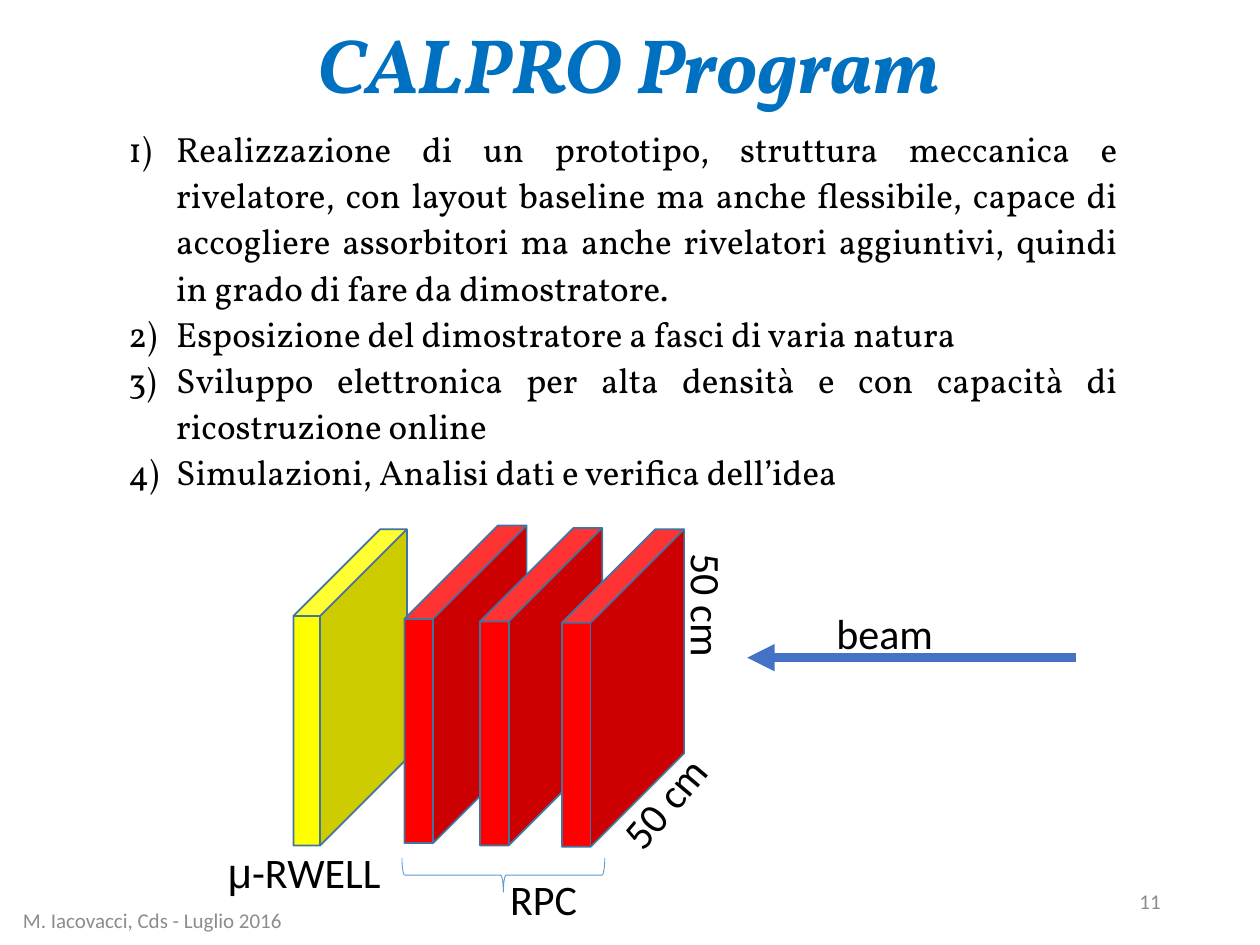
from dataclasses import dataclass

from lxml.etree import SubElement
from pptx import Presentation
from pptx.dml.color import RGBColor
from pptx.enum.shapes import MSO_CONNECTOR, MSO_SHAPE
from pptx.enum.text import MSO_ANCHOR, PP_ALIGN as ALIGN
from pptx.oxml.ns import qn
from pptx.util import Inches, Pt

COLS, ROWS = 100, 75
CELL = Inches(0.1)


@dataclass(frozen=True)
class Theme:
    serif: str = "Vollkorn"
    sans: str = "Calibri"
    symbol: str = "Arial"
    title: str = "0070C0"
    text: str = "000000"
    muted: str = "8C8C8C"
    well: str = "FFFF00"
    rpc: str = "FF0000"
    edge: str = "43739E"
    beam: str = "4472C4"
    brace: str = "5B9BD5"
    title_size: int = 44
    body_size: int = 20
    label_size: int = 24
    footer_size: int = 12


THEME = Theme()

GOALS = [
    "Realizzazione di un prototipo, struttura meccanica e rivelatore, con layout "
    "baseline ma anche flessibile, capace di accogliere assorbitori ma anche "
    "rivelatori aggiuntivi, quindi in grado di fare da dimostratore.",
    "Esposizione del dimostratore a fasci di varia natura",
    "Sviluppo elettronica per alta densità e con capacità di ricostruzione online",
    "Simulazioni, Analisi dati e verifica dell’idea",
]


def grid(*cells):
    """Turn columns and rows of the slide grid into lengths."""
    return [round(c * CELL) for c in cells]


def rgb(value):
    return RGBColor.from_string(value)


def add_run(p, text, size, color=THEME.text, font=THEME.sans):
    r = p.add_run()
    r.text = text
    r.font.size, r.font.name = Pt(size), font
    r.font.color.rgb = rgb(color)
    return r


def set_title(slide, text):
    sp = slide.shapes.title
    sp.left, sp.top, sp.width, sp.height = grid(24.2, -1.8, 86.2, 14.5)
    sp.text_frame.vertical_anchor = MSO_ANCHOR.MIDDLE
    p = sp.text_frame.paragraphs[0]
    p.alignment, p.line_spacing = ALIGN.LEFT, 0.9
    r = add_run(p, text, THEME.title_size, THEME.title, THEME.serif)
    r.font.bold = r.font.italic = True


def add_numbered_list(shapes, box, items):
    tf = shapes.add_textbox(*grid(*box)).text_frame
    tf.word_wrap = True
    for i, item in enumerate(items):
        p = tf.add_paragraph() if i else tf.paragraphs[0]
        pPr = p._p.get_or_add_pPr()
        pPr.set("marL", str(Inches(0.38)))
        pPr.set("indent", str(-Inches(0.38)))
        SubElement(pPr, qn("a:buAutoNum"), type="arabicParenR")
        p.alignment, p.line_spacing = ALIGN.JUSTIFY, 1.1
        add_run(p, item, THEME.body_size, font=THEME.serif)


def add_label(shapes, box, runs, rotation=0, wrap=False):
    """Add a diagram label from (text, font) pairs."""
    sp = shapes.add_textbox(*grid(*box))
    sp.rotation = rotation
    sp.text_frame.word_wrap = wrap
    for text, font in runs:
        add_run(sp.text_frame.paragraphs[0], text, THEME.label_size, font=font)


def add_footer(shapes, box, text, align):
    tf = shapes.add_textbox(*grid(*box)).text_frame
    tf.word_wrap = True
    tf.vertical_anchor = MSO_ANCHOR.MIDDLE
    tf.paragraphs[0].alignment = align
    add_run(tf.paragraphs[0], text, THEME.footer_size, THEME.muted)


def add_detector(shapes, box, color):
    sp = shapes.add_shape(MSO_SHAPE.CUBE, *grid(*box))
    sp.adjustments[0] = 0.765
    sp.shadow.inherit = False
    sp.fill.solid()
    sp.fill.fore_color.rgb = rgb(color)
    sp.line.color.rgb, sp.line.width = rgb(THEME.edge), Pt(1)


def add_brace(shapes, box):
    sp = shapes.add_shape(MSO_SHAPE.LEFT_BRACE, *grid(*box))
    sp.rotation = 270
    sp.shadow.inherit = False
    sp.fill.background()
    sp.line.color.rgb, sp.line.width = rgb(THEME.brace), Pt(0.5)


def add_arrow(shapes, ends):
    cxn = shapes.add_connector(MSO_CONNECTOR.STRAIGHT, *grid(*ends))
    cxn.line.color.rgb, cxn.line.width = rgb(THEME.beam), Pt(5.25)
    SubElement(cxn.line._get_or_add_ln(), qn("a:tailEnd"), type="triangle")
    SubElement(cxn._element.spPr, qn("a:effectLst"))


def add_beam_test(slide):
    shapes = slide.shapes.add_group_shape().shapes
    add_detector(shapes, (23.3, 42, 9, 25.1), THEME.well)
    for left, top in ((32.1, 41.7), (38.1, 41.9), (44.6, 42)):
        add_detector(shapes, (left, top, 9.7, 25.2), THEME.rpc)
    add_arrow(shapes, (85.4, 52.2, 59.3, 52.2))
    add_label(shapes, (65.4, 47.7, 9.8, 5), [("beam", THEME.sans)])
    add_brace(shapes, (38.6, 61.4, 2.7, 16.1))
    add_label(shapes, (39.5, 68.8, 7.4, 5), [("RPC", THEME.sans)])
    add_label(shapes, (17.1, 66.7, 14.3, 5),
              [("μ", THEME.symbol), ("-RWELL", THEME.sans)])
    for left, top, rotation in ((50.7, 45.9, 90), (47.5, 60.9, 310.3)):
        add_label(shapes, (left, top, 10.9, 5), [("50 cm", THEME.sans)],
                  rotation, wrap=True)


def main():
    prs = Presentation()
    prs.slide_width, prs.slide_height = grid(COLS, ROWS)
    slide = prs.slides.add_slide(prs.slide_layouts[5])
    set_title(slide, "CALPRO Program")
    add_numbered_list(slide.shapes, (9.2, 9.3, 80.5, 30.6), GOALS)
    add_beam_test(slide)
    add_footer(slide.shapes, (70.6, 69.5, 22.5, 4), "11", ALIGN.RIGHT)
    add_footer(slide.shapes, (-4.8, 71, 33.8, 4),
               "M. Iacovacci, Cds - Luglio 2016", ALIGN.CENTER)
    prs.save("out.pptx")


if __name__ == "__main__":
    main()
